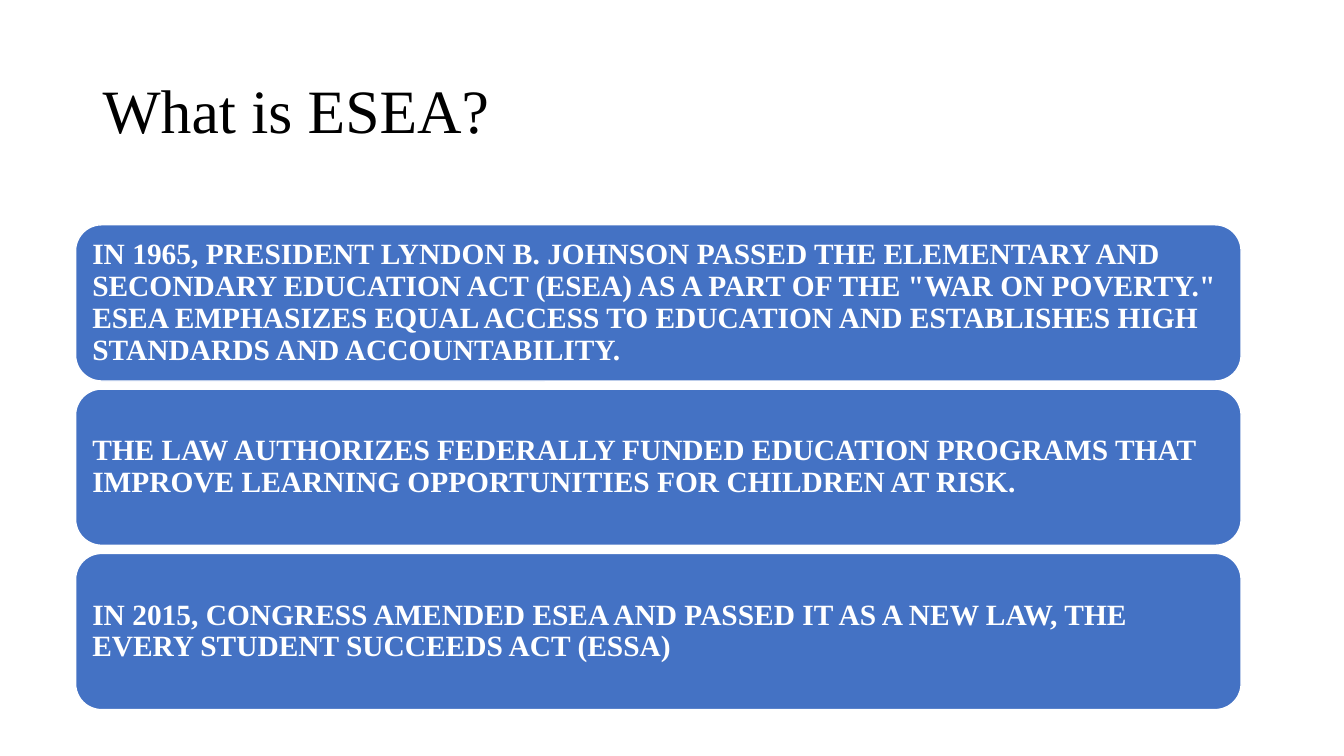
"""Build the slide that explains ESEA in three stacked statements."""
from dataclasses import dataclass

from pptx import Presentation
from pptx.dml.color import RGBColor
from pptx.enum.shapes import MSO_SHAPE
from pptx.enum.text import MSO_ANCHOR, PP_ALIGN
from pptx.util import Inches, Pt

TITLE = "What is ESEA?"
STATEMENTS = [
    'IN 1965, PRESIDENT LYNDON B. JOHNSON PASSED THE ELEMENTARY AND SECONDARY '
    'EDUCATION ACT (ESEA) AS A PART OF THE "WAR ON POVERTY." ESEA EMPHASIZES EQUAL '
    'ACCESS TO EDUCATION AND ESTABLISHES HIGH STANDARDS AND ACCOUNTABILITY.',
    "THE LAW AUTHORIZES FEDERALLY FUNDED EDUCATION PROGRAMS THAT IMPROVE LEARNING "
    "OPPORTUNITIES FOR CHILDREN AT RISK.",
    "IN 2015, CONGRESS AMENDED ESEA AND PASSED IT AS A NEW LAW, THE EVERY STUDENT "
    "SUCCEEDS ACT (ESSA)",
]


@dataclass(frozen=True)
class Theme:
    font: str = "Times New Roman"
    ink: RGBColor = RGBColor(0x00, 0x00, 0x00)
    light: RGBColor = RGBColor(0xFF, 0xFF, 0xFF)
    accent: RGBColor = RGBColor(0x44, 0x72, 0xC4)
    title_size: int = 44
    statement_size: int = 21
    line_spacing: float = 0.9


THEME = Theme()
STACK_LEFT, STACK_TOP, STACK_WIDTH = 0.75, 2.23, 11.56
STATEMENT_HEIGHT, STATEMENT_GAP = 1.55, 0.08
STATEMENT_INSET = Inches(0.09)


def write(frame, text, size, color, bold=False):
    frame.word_wrap = True
    frame.vertical_anchor = MSO_ANCHOR.MIDDLE
    frame.text = text
    paragraph = frame.paragraphs[0]
    paragraph.alignment = PP_ALIGN.LEFT
    paragraph.line_spacing = THEME.line_spacing
    font = paragraph.runs[0].font
    font.name, font.size, font.bold = THEME.font, Pt(size), bold
    font.color.rgb = color


def add_title(slide):
    title = slide.shapes.add_textbox(Inches(0.92), Inches(0.4), Inches(11.5), Inches(1.45))
    write(title.text_frame, TITLE, THEME.title_size, THEME.ink)


def add_statement(slide, text, top):
    statement = slide.shapes.add_shape(
        MSO_SHAPE.ROUNDED_RECTANGLE, Inches(STACK_LEFT), Inches(top),
        Inches(STACK_WIDTH), Inches(STATEMENT_HEIGHT))
    statement.shadow.inherit = False
    statement.fill.solid()
    statement.fill.fore_color.rgb = THEME.accent
    statement.line.color.rgb = THEME.light
    statement.line.width = Pt(1)
    frame = statement.text_frame
    frame.margin_left = frame.margin_right = STATEMENT_INSET
    frame.margin_top = frame.margin_bottom = STATEMENT_INSET
    write(frame, text, THEME.statement_size, THEME.light, bold=True)


def main():
    deck = Presentation()
    deck.slide_width, deck.slide_height = Inches(13.33), Inches(7.5)
    slide = deck.slides.add_slide(deck.slide_layouts[6])
    add_title(slide)
    for row, text in enumerate(STATEMENTS):
        add_statement(slide, text, STACK_TOP + row * (STATEMENT_HEIGHT + STATEMENT_GAP))
    deck.save("out.pptx")


if __name__ == "__main__":
    main()
